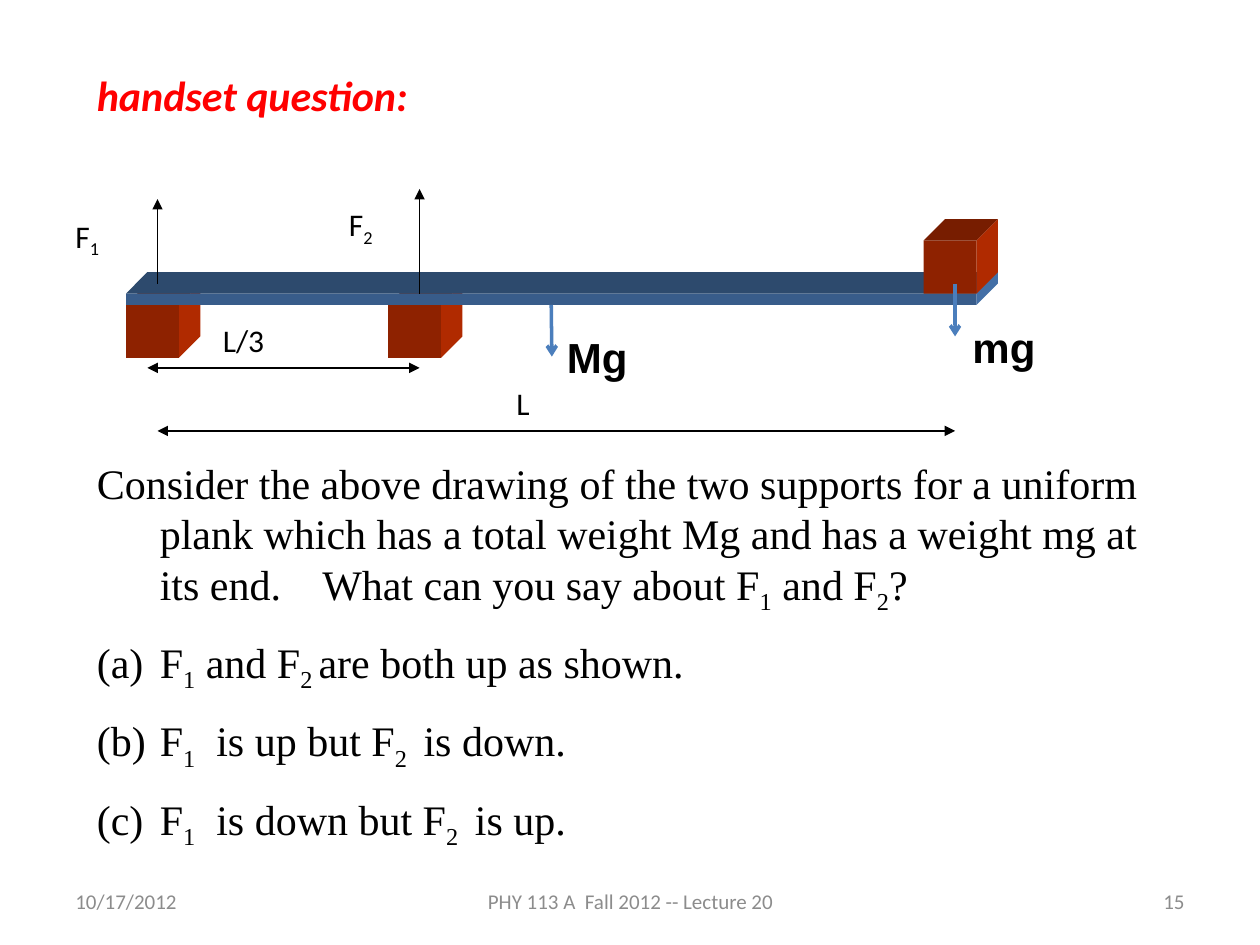
from dataclasses import dataclass
from typing import Optional

from lxml.etree import SubElement
from pptx import Presentation
from pptx.dml.color import RGBColor
from pptx.enum.shapes import MSO_CONNECTOR, MSO_SHAPE
from pptx.enum.text import MSO_ANCHOR, PP_ALIGN
from pptx.oxml.ns import qn
from pptx.util import Inches, Pt


@dataclass(frozen=True)
class Theme:
    ink: str = "000000"
    red: str = "FF0000"
    grey: str = "8C8C8C"
    blue: str = "4B7EBC"
    brick: tuple = ("8E2200", "771D00", "B02A00")
    steel: tuple = ("385C8A", "2D4A6D", "436FA6")
    sans: str = "Calibri"
    serif: str = "Times New Roman"
    bold: str = "Arial"
    small: int = 12
    mid: int = 18
    big: int = 24
    gap: int = 12


@dataclass(frozen=True)
class Style:
    font: str
    size: int
    color: str
    bold: bool = False
    slant: bool = False


@dataclass(frozen=True)
class Label:
    text: str
    left: float
    top: float
    width: float
    height: float
    style: Style
    align: PP_ALIGN = PP_ALIGN.LEFT
    anchor: MSO_ANCHOR = MSO_ANCHOR.TOP


@dataclass(frozen=True)
class Block:
    left: float
    top: float
    width: float
    height: float
    tones: tuple


@dataclass(frozen=True)
class Arrow:
    start: tuple
    end: tuple
    color: str
    width: float
    tail: str
    head: Optional[str] = None


THEME = Theme()
DEPTH = 0.17
FOOT = Style(THEME.sans, THEME.small, THEME.grey)
TITLE = Style(THEME.sans, THEME.big, THEME.red, True, True)
MARK = Style(THEME.sans, THEME.mid, THEME.ink)
FORCE = Style(THEME.bold, THEME.big, THEME.ink, True)
BODY = Style(THEME.serif, THEME.big, THEME.ink)

SIDE = 0.42
SUPPORTS = [Block(x, 2.42, SIDE, SIDE, THEME.brick) for x in (3.08, 1)]
PLANK = Block(1, 2.33, 6.75, 0.09, THEME.steel)
WEIGHT = Block(7.33, 1.91, SIDE, SIDE, THEME.brick)

LABELS = [
    Label("10/17/2012", 0.5, 6.95, 2.33, 0.4, FOOT, anchor=MSO_ANCHOR.MIDDLE),
    Label("PHY 113 A  Fall 2012 -- Lecture 20", 3.42, 6.95, 3.17, 0.4, FOOT,
          PP_ALIGN.CENTER, MSO_ANCHOR.MIDDLE),
    Label("15", 7.17, 6.95, 2.33, 0.4, FOOT, PP_ALIGN.RIGHT, MSO_ANCHOR.MIDDLE),
    Label("handset question:", 0.67, 0.5, 8.42, 0.5, TITLE),
    Label("F|1|", 0.5, 1.67, 0.58, 0.5, MARK),
    Label("F|2|", 2.67, 1.58, 0.58, 0.5, MARK),
    Label("L/3", 1.67, 2.5, 1.25, 0.5, MARK),
    Label("L", 4, 3, 1.25, 0.5, MARK),
    Label("Mg", 4.4, 2.58, 0.96, 0.5, FORCE),
    Label("mg", 7.62, 2.5, 0.96, 0.5, FORCE),
]
QUESTION = Label(
    "Consider the above drawing of the two supports for a uniform plank which "
    "has a total weight Mg and has a weight mg at its end.    What can you say "
    "about F|1| and F|2|?", 0.67, 3.58, 8.83, 3.69, BODY)
CHOICES = [
    "F|1| and F|2 |are both up as shown.",
    "F|1|  is up but F|2 | is down.",
    "F|1|  is down but F|2 | is up.",
]

ARROWS = [
    Arrow((1.25, 2.25), (1.25, 1.58), THEME.ink, 0.75, "triangle"),
    Arrow((3.33, 2.33), (3.33, 1.5), THEME.ink, 0.75, "triangle"),
    Arrow((1.17, 2.92), (3.33, 2.92), THEME.ink, 0.75, "triangle", "triangle"),
    Arrow((1.25, 3.42), (7.58, 3.42), THEME.ink, 0.75, "triangle", "triangle"),
    Arrow((7.58, 2.25), (7.58, 2.67), THEME.blue, 2, "arrow"),
]
PULL = Arrow((4.38, 2.42), (4.38, 2.83), THEME.blue, 2, "arrow")


def write(para, text: str, style: Style) -> None:
    for i, part in enumerate(text.split("|")):
        if not part:
            continue
        run = para.add_run()
        run.text = part
        font = run.font
        font.name, font.size = style.font, Pt(style.size)
        font.bold, font.italic = style.bold, style.slant
        font.color.rgb = RGBColor.from_string(style.color)
        if i % 2:
            run._r.get_or_add_rPr().set("baseline", "-25000")


def draw_label(slide, label: Label):
    box = slide.shapes.add_textbox(Inches(label.left), Inches(label.top),
                                   Inches(label.width), Inches(label.height))
    frame = box.text_frame
    frame.word_wrap = True
    frame.vertical_anchor = label.anchor
    para = frame.paragraphs[0]
    para.alignment = label.align
    write(para, label.text, label.style)
    return frame


def draw_body(slide) -> None:
    frame = draw_label(slide, QUESTION)
    for choice in CHOICES:
        para = frame.add_paragraph()
        para.space_before = Pt(THEME.gap)
        SubElement(para._p.get_or_add_pPr(), qn("a:buAutoNum"), type="alphaLcParenBoth")
        write(para, choice, BODY)
    for para in frame.paragraphs:
        props = para._p.get_or_add_pPr()
        props.set("marL", str(Inches(0.5)))
        props.set("indent", str(-Inches(0.5)))


def paint(shape, color: str) -> None:
    shape.shadow.inherit = False
    shape.fill.solid()
    shape.fill.fore_color.rgb = RGBColor.from_string(color)
    shape.line.fill.background()


def draw_block(slide, block: Block):
    group = slide.shapes.add_group_shape().shapes
    left, top = block.left, block.top
    right, base = left + block.width, top + block.height
    front, lid, side = block.tones
    faces = [
        (lid, [(left, top), (left + DEPTH, top - DEPTH),
               (right + DEPTH, top - DEPTH), (right, top)]),
        (side, [(right, top), (right + DEPTH, top - DEPTH),
                (right + DEPTH, base - DEPTH), (right, base)]),
    ]
    for color, points in faces:
        spots = [(Inches(x), Inches(y)) for x, y in points]
        pen = group.build_freeform(*spots[0])
        pen.add_line_segments(spots[1:], close=True)
        paint(pen.convert_to_shape(), color)
    face = group.add_shape(MSO_SHAPE.RECTANGLE, Inches(left), Inches(top),
                           Inches(block.width), Inches(block.height))
    paint(face, front)
    return face


def draw_arrow(slide, arrow: Arrow):
    ends = [Inches(v) for v in arrow.start + arrow.end]
    link = slide.shapes.add_connector(MSO_CONNECTOR.STRAIGHT, *ends)
    link.line.color.rgb = RGBColor.from_string(arrow.color)
    link.line.width = Pt(arrow.width)
    line = link.line._get_or_add_ln()
    for tag, kind in (("a:headEnd", arrow.head), ("a:tailEnd", arrow.tail)):
        if kind:
            SubElement(line, qn(tag), type=kind)
    SubElement(link._element.spPr, qn("a:effectLst"))
    return link


def main() -> None:
    deck = Presentation()
    deck.slide_width, deck.slide_height = Inches(10), Inches(7.5)
    slide = deck.slides.add_slide(deck.slide_layouts[6])
    for block in SUPPORTS:
        draw_block(slide, block)
    plank = draw_block(slide, PLANK)
    draw_block(slide, WEIGHT)
    for arrow in ARROWS:
        draw_arrow(slide, arrow)
    draw_arrow(slide, PULL).begin_connect(plank, 2)
    for label in LABELS:
        draw_label(slide, label)
    draw_body(slide)
    deck.save("out.pptx")


if __name__ == "__main__":
    main()
